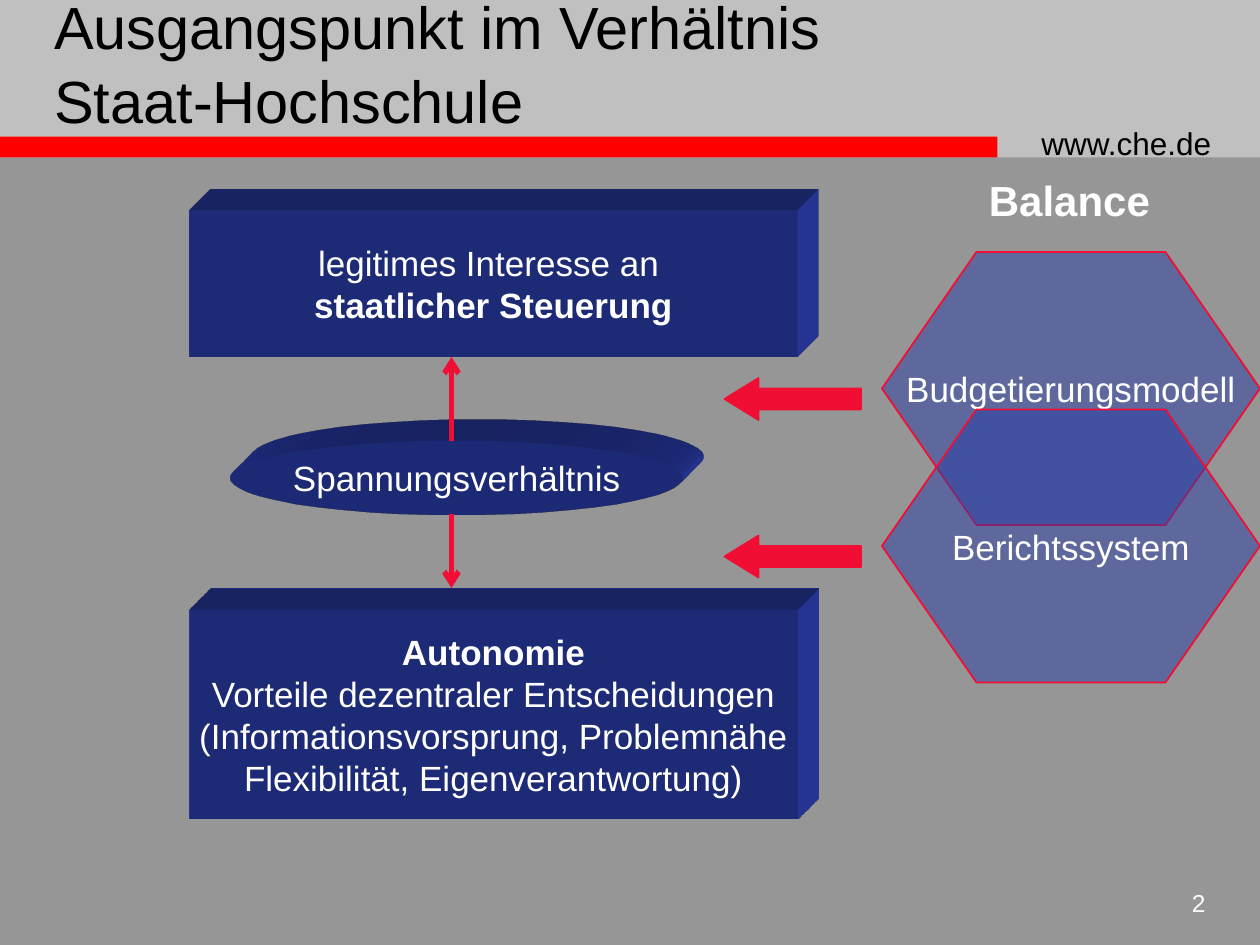
from lxml.etree import SubElement
from pptx import Presentation
from pptx.dml.color import RGBColor
from pptx.enum.shapes import MSO_CONNECTOR, MSO_SHAPE
from pptx.enum.text import MSO_ANCHOR, PP_ALIGN
from pptx.oxml import parse_xml
from pptx.oxml.ns import nsdecls, qn
from pptx.util import Inches, Pt

THEME = {
    "font": "Arial",
    "ground": "969696", "header": "C0C0C0", "bar": "FF0000",
    "block": "293BA5", "accent": "F00E34", "light": "FFFFFF", "dark": "000000",
    "title": 34, "heading": 24, "body": 20, "address": 18, "number": 14,
}
COLS, ROWS = 120, 90
WIDTH, HEIGHT = Inches(10), Inches(7.5)

BANDS = [("header", (0, 0, 120, 15)), ("bar", (0, 13, 95, 2))]
LABELS = [
    ("www.che.de", (98, 11.25, 21, 4.75), "address", "dark", False, PP_ALIGN.LEFT, MSO_ANCHOR.TOP),
    ("2", (109, 84, 7, 5), "number", "light", False, PP_ALIGN.RIGHT, MSO_ANCHOR.TOP),
    ("Ausgangspunkt im Verhältnis\vStaat-Hochschule", (4, -1, 102, 14.5), "title", "dark", False,
     PP_ALIGN.LEFT, MSO_ANCHOR.BOTTOM),
    ("Balance", (93, 16, 17.75, 6), "heading", "light", True, PP_ALIGN.LEFT, MSO_ANCHOR.TOP),
]
BLOCKS = [
    (MSO_SHAPE.RECTANGLE, (18, 20, 58, 14),
     [("legitimes Interesse an ", False), ("staatlicher Steuerung", True)]),
    (MSO_SHAPE.OVAL, (22, 42, 43, 7), [("Spannungsverhältnis", False)]),
    (MSO_SHAPE.RECTANGLE, (18, 58, 58, 20),
     [("Autonomie", True), ("Vorteile dezentraler Entscheidungen", False),
      ("(Informationsvorsprung, Problemnähe", False), ("Flexibilität, Eigenverantwortung)", False)]),
]
TENSION_COL = 43
TENSION_ROWS = [(42, 34), (49, 56)]
INSTRUMENTS = ["Budgetierungsmodell", "Berichtssystem"]
HEXAGON, POINTER, INSTRUMENT_STEP = (84, 24, 36, 26), (69, 36, 13, 4), 15


def place(col, row, cols, rows):
    return [int(WIDTH * col / COLS), int(HEIGHT * row / ROWS),
            int(WIDTH * cols / COLS), int(HEIGHT * rows / ROWS)]


def color(name):
    return RGBColor.from_string(THEME[name])


def write(sp, lines, size, ink, align, anchor, wrap):
    tf = sp.text_frame
    tf.text = "\n".join(text for text, bold in lines)
    tf.word_wrap = wrap
    tf.vertical_anchor = anchor
    for p, (text, bold) in zip(tf.paragraphs, lines):
        p.alignment = align
        for r in p.runs:
            r.font.name = THEME["font"]
            r.font.size = Pt(THEME[size])
            r.font.bold = bold
            r.font.color.rgb = color(ink)


def add_shape(shapes, kind, cell, fill, line=None, lines=()):
    sp = shapes.add_shape(kind, *place(*cell))
    sp.shadow.inherit = False
    sp.fill.solid()
    sp.fill.fore_color.rgb = color(fill)
    if line:
        sp.line.color.rgb = color(line)
        sp.line.width = Pt(1)
    else:
        sp.line.fill.background()
    if lines:
        write(sp, lines, "body", "light", PP_ALIGN.CENTER, MSO_ANCHOR.MIDDLE, False)
    return sp


def extrude(sp):
    spPr = sp._element.spPr
    spPr.append(parse_xml(
        f'<a:scene3d {nsdecls("a")}><a:camera prst="legacyObliqueTopRight"/>'
        '<a:lightRig rig="legacyFlat3" dir="b"/></a:scene3d>'))
    spPr.append(parse_xml(
        f'<a:sp3d {nsdecls("a")} extrusionH="430200" prstMaterial="legacyMatte">'
        '<a:bevelT w="13500" h="13500" prst="angle"/><a:bevelB w="13500" h="13500" prst="angle"/>'
        f'<a:extrusionClr><a:srgbClr val="{THEME["block"]}"/></a:extrusionClr></a:sp3d>'))


def add_tension(shapes, start, end):
    x, y1, _, y2 = place(TENSION_COL, start, 0, end)
    line = shapes.add_connector(MSO_CONNECTOR.STRAIGHT, x, y1, x, y2)
    line.line.color.rgb = color("accent")
    line.line.width = Pt(3)
    SubElement(line.line._get_or_add_ln(), qn("a:tailEnd"), type="arrow")
    SubElement(line._element.spPr, qn("a:effectLst"))


def add_instrument(shapes, index, text):
    def shifted(cell):
        col, row, cols, rows = cell
        return col, row + index * INSTRUMENT_STEP, cols, rows

    group = shapes.add_group_shape().shapes
    hexagon = add_shape(group, MSO_SHAPE.HEXAGON, shifted(HEXAGON), "block", "accent", [(text, False)])
    hexagon.adjustments[0] = 0.346
    tint = hexagon._element.spPr.find(qn("a:solidFill"))[0]
    SubElement(tint, qn("a:alpha"), val="50000")
    pointer = add_shape(group, MSO_SHAPE.LEFT_ARROW, shifted(POINTER), "accent", "accent")
    pointer.adjustments[1] = 0.812


def main():
    prs = Presentation()
    prs.slide_width, prs.slide_height = WIDTH, HEIGHT
    s = prs.slides.add_slide(prs.slide_layouts[6])
    s.background.fill.solid()
    s.background.fill.fore_color.rgb = color("ground")

    for fill, cell in BANDS:
        add_shape(s.shapes, MSO_SHAPE.RECTANGLE, cell, fill)
    for text, cell, size, ink, bold, align, anchor in LABELS:
        box = s.shapes.add_textbox(*place(*cell))
        write(box, [(text, bold)], size, ink, align, anchor, True)
        if size == "title":
            box.text_frame.paragraphs[0].line_spacing = 1.04
    for kind, cell, lines in BLOCKS:
        extrude(add_shape(s.shapes, kind, cell, "block", lines=lines))
    for start, end in TENSION_ROWS:
        add_tension(s.shapes, start, end)
    for index, text in enumerate(INSTRUMENTS):
        add_instrument(s.shapes, index, text)

    prs.save("out.pptx")


if __name__ == "__main__":
    main()
